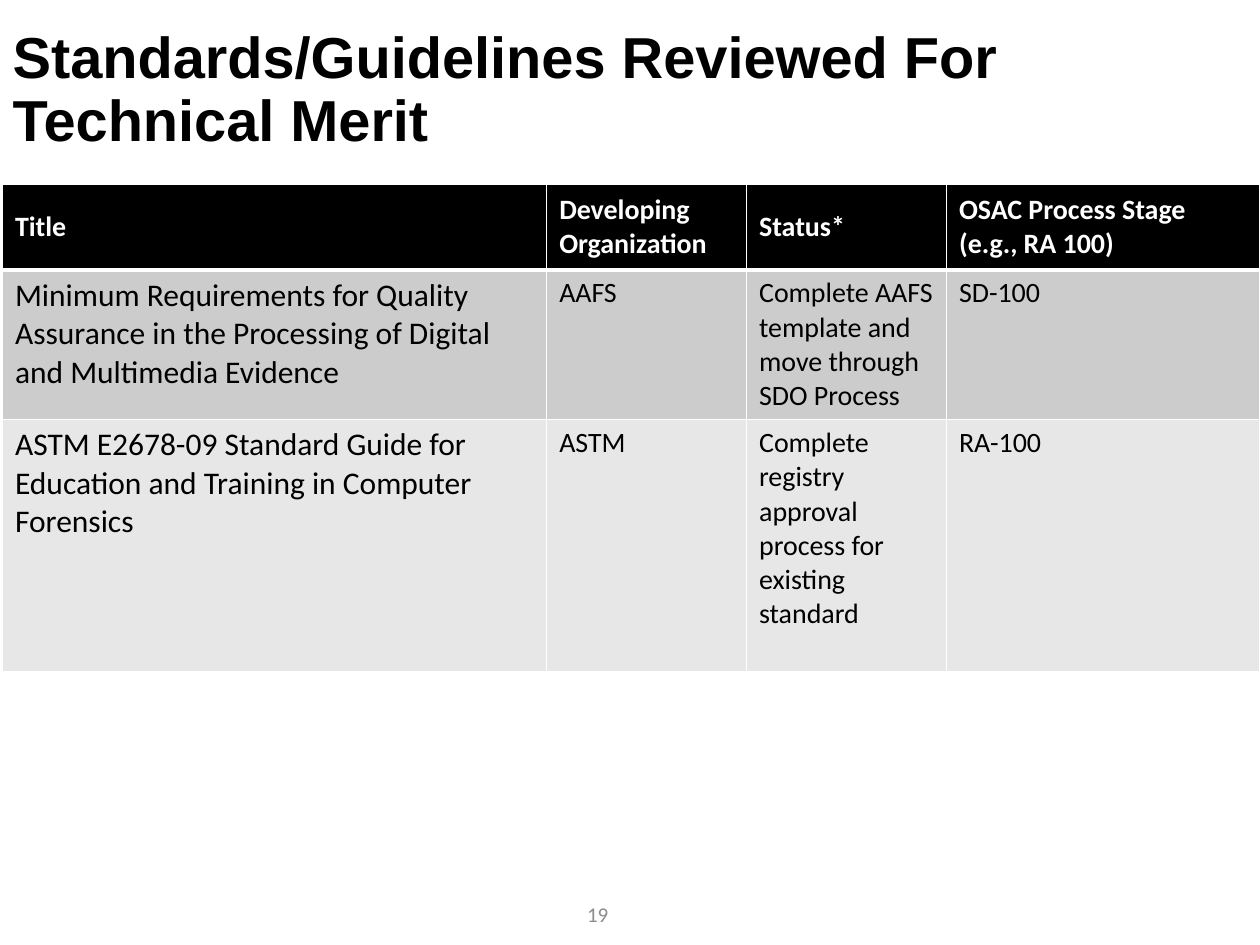
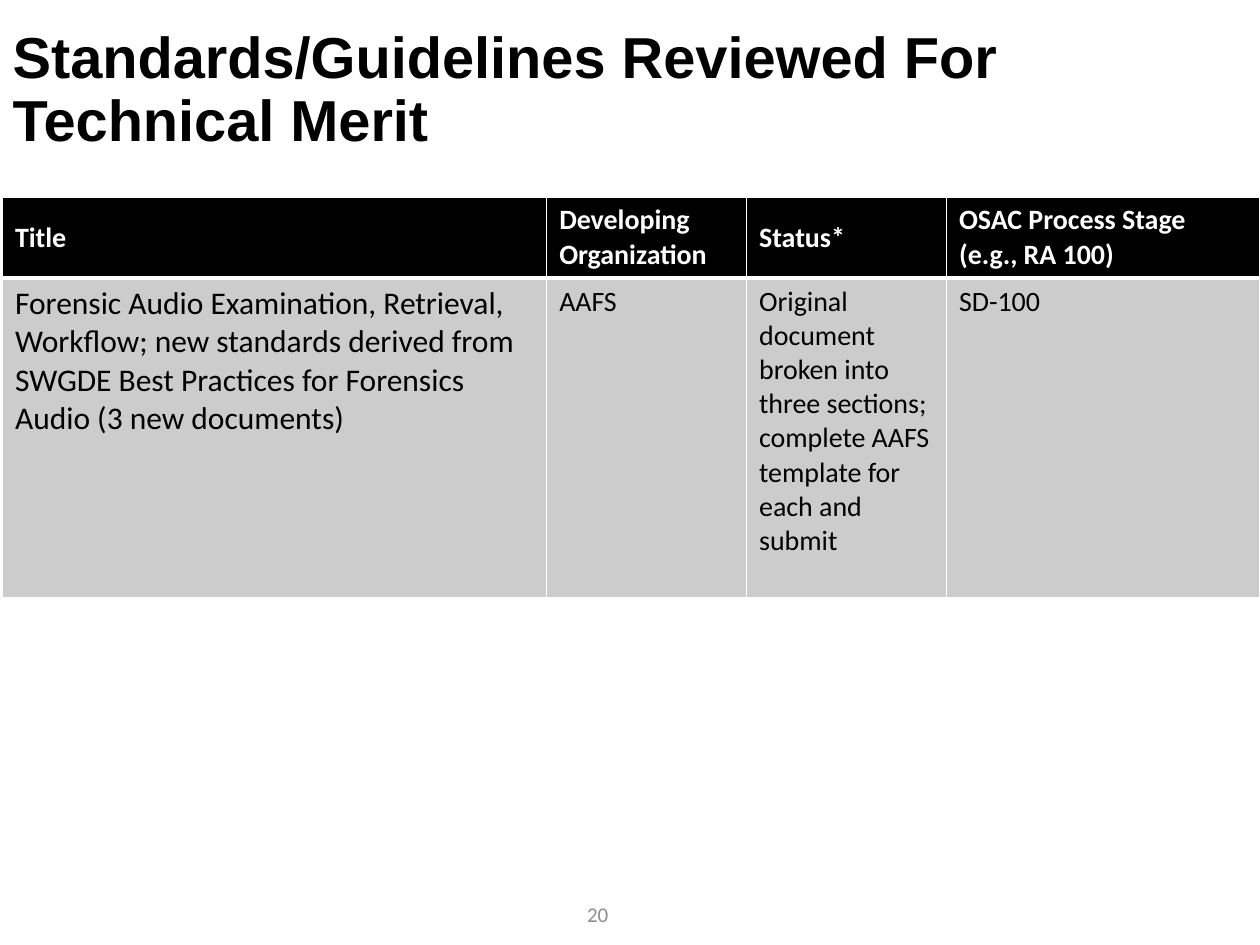
from lxml import etree
from pptx import Presentation
from pptx.dml.color import RGBColor
from pptx.enum.text import MSO_ANCHOR as Anchor, MSO_AUTO_SIZE as AutoSize, PP_ALIGN as Align
from pptx.oxml.ns import qn
from pptx.util import Cm, Pt

# Shared style
BLACK, WHITE, GREY = "000000", "FFFFFF", "8C8C8C"
BANDS = ["CCCCCC", "E7E7E7"]
HEADING = "Standards/Guidelines Reviewed For Technical Merit"
HEADERS = ["Title", "Developing Organization", "Status*", "OSAC Process Stage (e.g., RA 100)"]
COLUMN_WIDTHS = [10.97, 4.03, 4.03, 6.32]

# Each slide: number, table top, row heights, body rows
SLIDES = [
    (19, 3.71, [1.73, 3.02, 5.08], [
        ["Minimum Requirements for Quality Assurance in the Processing of Digital and Multimedia Evidence",
         "AAFS", "Complete AAFS template and move through SDO Process", "SD-100"],
        ["ASTM E2678-09 Standard Guide for Education and Training in Computer Forensics",
         "ASTM", "Complete registry approval process for existing standard", "RA-100"],
    ]),
    (20, 3.97, [1.63, 6.45], [
        ["Forensic Audio Examination, Retrieval, Workflow; new standards derived from "
         "SWGDE Best Practices for Forensics Audio (3 new documents)",
         "AAFS", "Original document broken into three sections; complete AAFS template for each and submit",
         "SD-100"],
    ]),
]


def write(frame, text, size, color, font="Calibri", bold=False, align=Align.LEFT):
    para = frame.paragraphs[0]
    para.alignment = align
    span = para.add_run()
    span.text = text
    span.font.size, span.font.name, span.font.bold = Pt(size), font, bold
    span.font.color.rgb = RGBColor.from_string(color)
    return para


def set_borders(cell, top, bottom):
    properties = cell._tc.get_or_add_tcPr()
    for position, (side, width) in enumerate([("L", 1), ("R", 1), ("T", top), ("B", bottom)]):
        line = etree.Element(qn(f"a:ln{side}"), w=str(Pt(width)))
        fill = etree.SubElement(line, qn("a:solidFill"))
        etree.SubElement(fill, qn("a:srgbClr"), val=WHITE)
        properties.insert(position, line)


deck = Presentation()
deck.slide_width, deck.slide_height = Cm(25.4), Cm(19.05)

for number, table_top, row_heights, body_rows in SLIDES:
    page = deck.slides.add_slide(deck.slide_layouts[5])

    # Title
    title = page.shapes.title
    title.left, title.top, title.width, title.height = Cm(0), Cm(0), Cm(21.9), Cm(3.68)
    title.text_frame.auto_size = AutoSize.NONE
    title.text_frame.vertical_anchor = Anchor.MIDDLE
    write(title.text_frame, HEADING, 33, BLACK, "Arial", True).line_spacing = 0.9

    # Table of reviewed standards
    rows = [HEADERS] + body_rows
    table = page.shapes.add_table(len(rows), len(HEADERS), Cm(0.05), Cm(table_top),
                                  Cm(sum(COLUMN_WIDTHS)), Cm(sum(row_heights))).table
    for column, width in zip(table.columns, COLUMN_WIDTHS):
        column.width = Cm(width)
    for r, (row, height) in enumerate(zip(rows, row_heights)):
        table.rows[r].height = Cm(height)
        is_header = r == 0
        for c, text in enumerate(row):
            cell = table.cell(r, c)
            cell.fill.solid()
            cell.fill.fore_color.rgb = RGBColor.from_string(BLACK if is_header else BANDS[r - 1])
            cell.vertical_anchor = Anchor.MIDDLE if is_header else Anchor.TOP
            set_borders(cell, top=3 if r == 1 else 1, bottom=3 if is_header else 1)
            size = 18 if c == 0 and not is_header else 16
            write(cell.text_frame, text, size, WHITE if is_header else BLACK, bold=is_header)

    # Slide number
    box = page.shapes.add_textbox(Cm(9.19), Cm(17.91), Cm(5.72), Cm(1.02))
    box.text_frame.word_wrap = True
    box.text_frame.vertical_anchor = Anchor.MIDDLE
    write(box.text_frame, str(number), 12, GREY, align=Align.CENTER)

deck.save("out.pptx")
